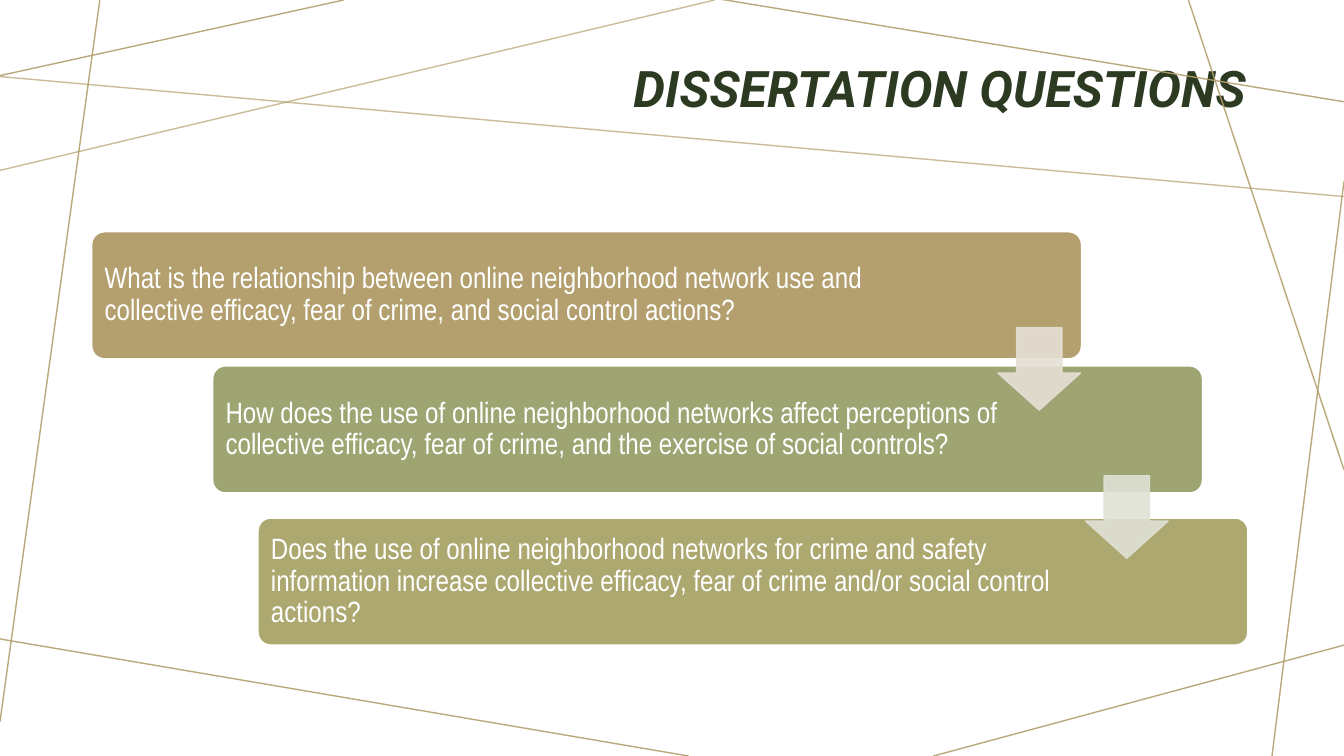
from lxml import etree
from pptx import Presentation
from pptx.dml.color import RGBColor
from pptx.enum.shapes import MSO_CONNECTOR, MSO_SHAPE
from pptx.enum.text import MSO_ANCHOR, PP_ALIGN
from pptx.oxml.ns import qn
from pptx.util import Pt

STRAIGHT = MSO_CONNECTOR.STRAIGHT
ROUND = MSO_SHAPE.ROUNDED_RECTANGLE
DOWN = MSO_SHAPE.DOWN_ARROW
MIDDLE = MSO_ANCHOR.MIDDLE
LEFT, RIGHT = PP_ALIGN.LEFT, PP_ALIGN.RIGHT

COLORS = {
    "title": "2C3A21", "white": "FFFFFF", "tan": "B3A06E",
    "sage": "9EA573", "olive": "ACA870", "sand": "E5DFD5", "mist": "DFE1D5",
}

CARD_W, CARD_H = 707, 90.7
ARROW = 59
INSET = 6.6

STRONG = [
    (245.5, 0, 0, 54),
    (71.3, 0, 0, 515.5),
    (491.8, 540, -3.6, 455.8),
    (960, 460.8, 666.7, 540),
    (960, 129.6, 908.6, 540),
    (960, 335.5, 848.9, 0),
    (960, 72.7, 514.1, -0.7),
]
LIGHT = [(0, 121.7, 510.5, 0), (0, 54.7, 960, 140.4)]

CARDS = [
    (65.5, 165.6, "tan", 99.4,
     "What is the relationship between online neighborhood network use and "
     "collective efficacy, fear of crime, and social control actions?"),
    (151.9, 261.4, "sage", 127.4,
     "How does the use of online neighborhood networks affect perceptions of "
     "collective efficacy, fear of crime, and the exercise of social controls?"),
    (184.3, 370.1, "olive", 127.4,
     "Does the use of online neighborhood networks for crime and safety "
     "information increase collective efficacy, fear of crime and/or social "
     "control actions?"),
]
ARROWS = [(712.8, 234, "sand"), (775.4, 339.8, "mist")]


def color(name):
    return RGBColor.from_string(COLORS[name])


def fade(item, percent):
    props = item._element.spPr
    for node in props.iter(qn("a:srgbClr")):
        alpha = etree.SubElement(node, qn("a:alpha"))
        alpha.set("val", str(percent * 1000))


def add_line(slide, ends, percent):
    line = slide.shapes.add_connector(STRAIGHT, *map(Pt, ends))
    line.line.color.rgb = color("tan")
    line.line.width = Pt(1)
    fade(line, percent)
    etree.SubElement(line._element.spPr, qn("a:effectLst"))


def add_block(slide, kind, box, fill, edge, adjust):
    block = slide.shapes.add_shape(kind, *map(Pt, box))
    for index, value in enumerate(adjust):
        block.adjustments[index] = value
    block.shadow.inherit = False
    block.fill.solid()
    block.fill.fore_color.rgb = color(fill)
    block.line.color.rgb = color(edge)
    block.line.width = Pt(1)
    return block


def style(text, face, size, shade, align):
    text.paragraphs[0].alignment = align
    text.paragraphs[0].line_spacing = 0.9
    font = text.paragraphs[0].font
    font.name = face
    font.size = Pt(size)
    font.color.rgb = color(shade)
    text.vertical_anchor = MIDDLE
    text.word_wrap = True
    return font


def add_card(slide, left, top, fill, right, words):
    box = (left, top, CARD_W, CARD_H)
    text = add_block(slide, ROUND, box, fill, "white", [0.1]).text_frame
    text.margin_left = text.margin_top = text.margin_bottom = Pt(INSET)
    text.margin_right = Pt(right)
    text.text = words
    style(text, "Arial Narrow", 21, "white", LEFT)


def add_arrow(slide, left, top, fill):
    box = (left, top, ARROW, ARROW)
    fade(add_block(slide, DOWN, box, fill, fill, [0.55, 0.45]), 90)


def set_title(slide, words):
    title = slide.shapes.title
    title.left, title.top = Pt(398.2), Pt(33.8)
    title.width, title.height = Pt(499), Pt(63.4)
    title.text_frame.text = words
    font = style(title.text_frame, "Roboto", 36, "title", RIGHT)
    font.bold = font.italic = True


def main():
    deck = Presentation()
    deck.slide_width, deck.slide_height = Pt(960), Pt(540)
    slide = deck.slides.add_slide(deck.slide_layouts[5])
    for lines, percent in ((STRONG, 91), (LIGHT, 70)):
        for ends in lines:
            add_line(slide, ends, percent)
    set_title(slide, "DISSERTATION QUESTIONS")
    for card in CARDS:
        add_card(slide, *card)
    for arrow in ARROWS:
        add_arrow(slide, *arrow)
    deck.save("out.pptx")


if __name__ == "__main__":
    main()
